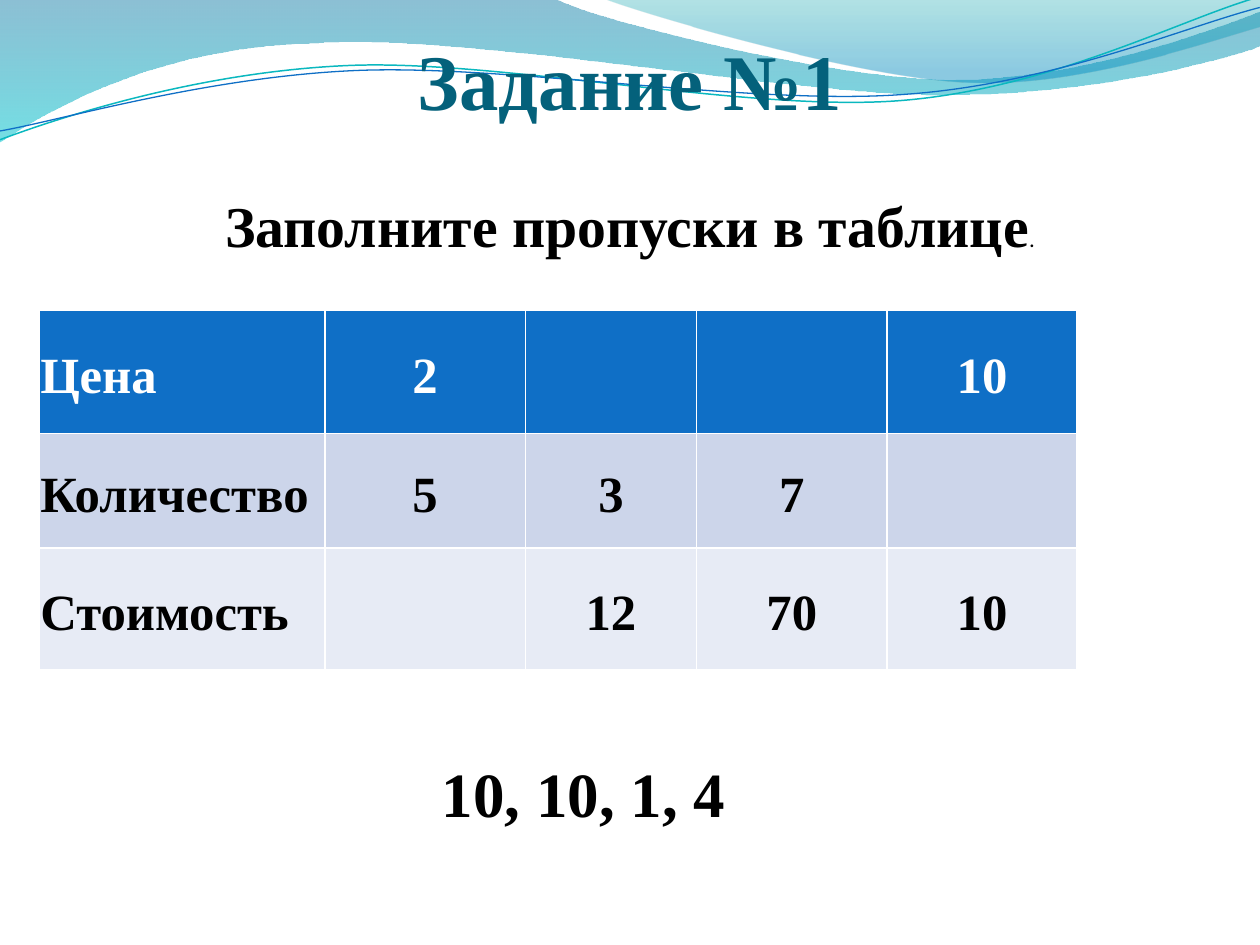
from math import cos, radians, sin

from lxml.etree import SubElement
from pptx import Presentation
from pptx.dml.color import RGBColor
from pptx.enum.text import MSO_ANCHOR, MSO_AUTO_SIZE, PP_ALIGN
from pptx.oxml.ns import qn
from pptx.util import Inches, Pt

COLORS = {
    "title": "04617B", "text": "000000", "white": "FFFFFF",
    "header": "0F6FC6", "odd_row": "CCD5EA", "even_row": "E7EBF5",
    "teal_line": "0AB8BF", "blue_line": "0F6FC6",
    "deep_blue": "0074A1", "cyan": "00C6CF", "teal": "00A1A9", "sky": "008BBF",
}
SERIF = "Times New Roman"
CURVE_TILT = -2.7

# Each outline: a start point, then line ends (2 numbers) or Bezier curves (6 numbers)
WIDE_WAVE = [(0, 0), (4.4, -0.01), (4.76, 0.17, 6.64, 0.63, 7.58, 0.63),
             (8.53, 0.63, 9.58, 0.26, 10, 0.09), (10.01, 0.36),
             (9.83, 0.44, 8.7, 0.76, 7.46, 0.75), (6.22, 0.75, 3.82, 0.28, 2.57, 0.34),
             (1.29, 0.36, 0.46, 0.83, -0.01, 1.13), (0, 0)]
RIGHT_WAVE = [(4.79, -0.01), (5.09, 0.11, 6.82, 0.62, 7.69, 0.65),
              (8.56, 0.69, 9.61, 0.32, 10, 0.21), (10, 0), (4.79, -0.01)]
TEAL_CURVE = [(0, 1.11), (0.48, 0.93, 1.58, 0.57, 2.77, 0.52),
              (3.95, 0.47, 5.93, 0.89, 7.13, 0.8), (8.33, 0.71, 9.38, 0.15, 9.98, -0.02)]
BLUE_CURVE = [(0, 1.04), (0.47, 0.96, 1.64, 0.61, 2.83, 0.56),
              (4.03, 0.51, 5.97, 0.84, 7.17, 0.75), (8.36, 0.67, 9.41, 0.21, 10, 0.06)]

COLUMN_WIDTHS = [2.27, 1.59, 1.36, 1.51, 1.51]
ROW_HEIGHTS = [0.98, 0.91, 0.97]
ROWS = [
    ("Цена", "2", "", "", "10"),
    ("Количество", "5", "3", "7", ""),
    ("Стоимость", "", "12", "70", "10"),
]
ROW_STYLES = [("header", "white"), ("odd_row", "text"), ("even_row", "text")]


def rgb(name):
    return RGBColor.from_string(COLORS[name])


def add_text(paragraph, text, size, color="text", font=SERIF, bold=True, align=None):
    run = paragraph.add_run()
    run.text = text
    run.font.size = Pt(size)
    run.font.name = font
    run.font.bold = bold
    run.font.color.rgb = rgb(color)
    if align is not None:
        paragraph.alignment = align


def turn(points, degrees):
    """Turn points clockwise about the middle of their bounds."""
    center_x, center_y = [(min(values) + max(values)) / 2 for values in zip(*points)]
    cosine, sine = cos(radians(degrees)), sin(radians(degrees))
    return [(center_x + (x - center_x) * cosine - (y - center_y) * sine,
             center_y + (x - center_x) * sine + (y - center_y) * cosine) for x, y in points]


def add_outline(slide, outline, close=False, tilt=0):
    points = [segment[i:i + 2] for segment in outline for i in range(0, len(segment), 2)]
    points = [(Inches(x), Inches(y)) for x, y in turn(points, -tilt)]
    builder = slide.shapes.build_freeform(*points[0])
    builder.add_line_segments(points[1:], close=close)
    shape = builder.convert_to_shape()
    shape.rotation = tilt
    shape.shadow.inherit = False

    # Join the three points of each Bezier segment into one curve
    lines = iter(list(shape.element.iter(qn("a:lnTo"))))
    for segment in outline[1:]:
        line = next(lines)
        if len(segment) == 6:
            line.tag = qn("a:cubicBezTo")
            for _ in range(2):
                control = next(lines)
                line.append(control[0])
                control.getparent().remove(control)
    return shape


def add_wave(slide, outline, stops):
    """Stops are (position, color, opacity in percent)."""
    shape = add_outline(slide, outline, close=True)
    shape.line.fill.background()
    shape.fill.gradient()
    shape.fill.gradient_angle = 270
    for stop, (position, color, _) in zip(shape.fill.gradient_stops, stops):
        stop.position = position
        stop.color.rgb = rgb(color)
    stop_colors = shape.element.spPr.iter(qn("a:srgbClr"))
    for element, (_, _, opacity) in zip(stop_colors, stops):
        SubElement(element, qn("a:alpha"), val=str(opacity * 1000))


def add_curve(slide, outline, color, width):
    shape = add_outline(slide, outline, tilt=CURVE_TILT)
    shape.fill.background()
    shape.line.color.rgb = rgb(color)
    shape.line.width = Pt(width)


def add_wave_header(slide):
    add_wave(slide, WIDE_WAVE, [(0, "deep_blue", 45), (1, "cyan", 55)])
    add_wave(slide, RIGHT_WAVE, [(0, "teal", 30), (0.8, "sky", 45)])
    add_curve(slide, TEAL_CURVE, "teal_line", 0.85)
    add_curve(slide, BLUE_CURVE, "blue_line", 0.75)


def place_title(slide, text, left, top, width, height):
    title = slide.shapes.title
    title.left, title.top = Inches(left), Inches(top)
    title.width, title.height = Inches(width), Inches(height)
    frame = title.text_frame
    frame.auto_size = MSO_AUTO_SIZE.NONE
    frame.vertical_anchor = MSO_ANCHOR.BOTTOM
    frame.margin_left = frame.margin_right = frame.margin_bottom = 0
    frame.margin_top = Inches(0.05)
    add_text(frame.paragraphs[0], text, 45, color="title", align=PP_ALIGN.CENTER)
    # Bring the title in front of the waves
    title.element.getparent().append(title.element)


def add_text_box(slide, left, top, width, height, anchor=MSO_ANCHOR.TOP):
    box = slide.shapes.add_textbox(Inches(left), Inches(top), Inches(width), Inches(height))
    frame = box.text_frame
    frame.word_wrap = False
    frame.auto_size = MSO_AUTO_SIZE.SHAPE_TO_FIT_TEXT
    frame.vertical_anchor = anchor
    return frame.paragraphs[0]


def format_cell(cell, text, fill, color, align):
    properties = cell._tc.get_or_add_tcPr()
    for side in ("a:lnL", "a:lnR", "a:lnT", "a:lnB"):
        border = SubElement(properties, qn(side), w=str(Pt(1)))
        solid = SubElement(border, qn("a:solidFill"))
        SubElement(solid, qn("a:srgbClr"), val=COLORS["white"])
    cell.fill.solid()
    cell.fill.fore_color.rgb = rgb(fill)
    cell.vertical_anchor = MSO_ANCHOR.MIDDLE
    cell.margin_left = cell.margin_right = Inches(0.01)
    cell.margin_top = cell.margin_bottom = Inches(0.01)
    if text:
        paragraph = cell.text_frame.paragraphs[0]
        paragraph.line_spacing = 1.15
        add_text(paragraph, text, 29, color=color, align=align)


def add_price_table(slide, left, top):
    table = slide.shapes.add_table(
        len(ROWS), len(COLUMN_WIDTHS), Inches(left), Inches(top),
        Inches(sum(COLUMN_WIDTHS)), Inches(sum(ROW_HEIGHTS))).table
    for column, width in zip(table.columns, COLUMN_WIDTHS):
        column.width = Inches(width)
    for row, height, texts, (fill, color) in zip(table.rows, ROW_HEIGHTS, ROWS, ROW_STYLES):
        row.height = Inches(height)
        for index, (cell, text) in enumerate(zip(row.cells, texts)):
            align = PP_ALIGN.CENTER if index else PP_ALIGN.LEFT
            format_cell(cell, text, fill, color, align)


def main():
    presentation = Presentation()
    presentation.slide_width, presentation.slide_height = Inches(10), Inches(7.5)
    slide = presentation.slides.add_slide(presentation.slide_layouts[5])

    add_wave_header(slide)
    place_title(slide, "Задание №1", 0.5, 0.29, 9, 0.71)
    add_price_table(slide, 0.31, 2.46)

    # Instruction above the table
    instruction = add_text_box(slide, 1.66, 1.46, 6.68, 0.65, anchor=MSO_ANCHOR.MIDDLE)
    add_text(instruction, "Заполните пропуски в таблице", 33, align=PP_ALIGN.CENTER)
    add_text(instruction, ".", 13, font="Calibri", bold=False)

    # Answers below the table
    answers = add_text_box(slide, 3.41, 5.94, 2.46, 0.7)
    add_text(answers, "10, 10, 1, 4", 36)

    presentation.save("out.pptx")


if __name__ == "__main__":
    main()
